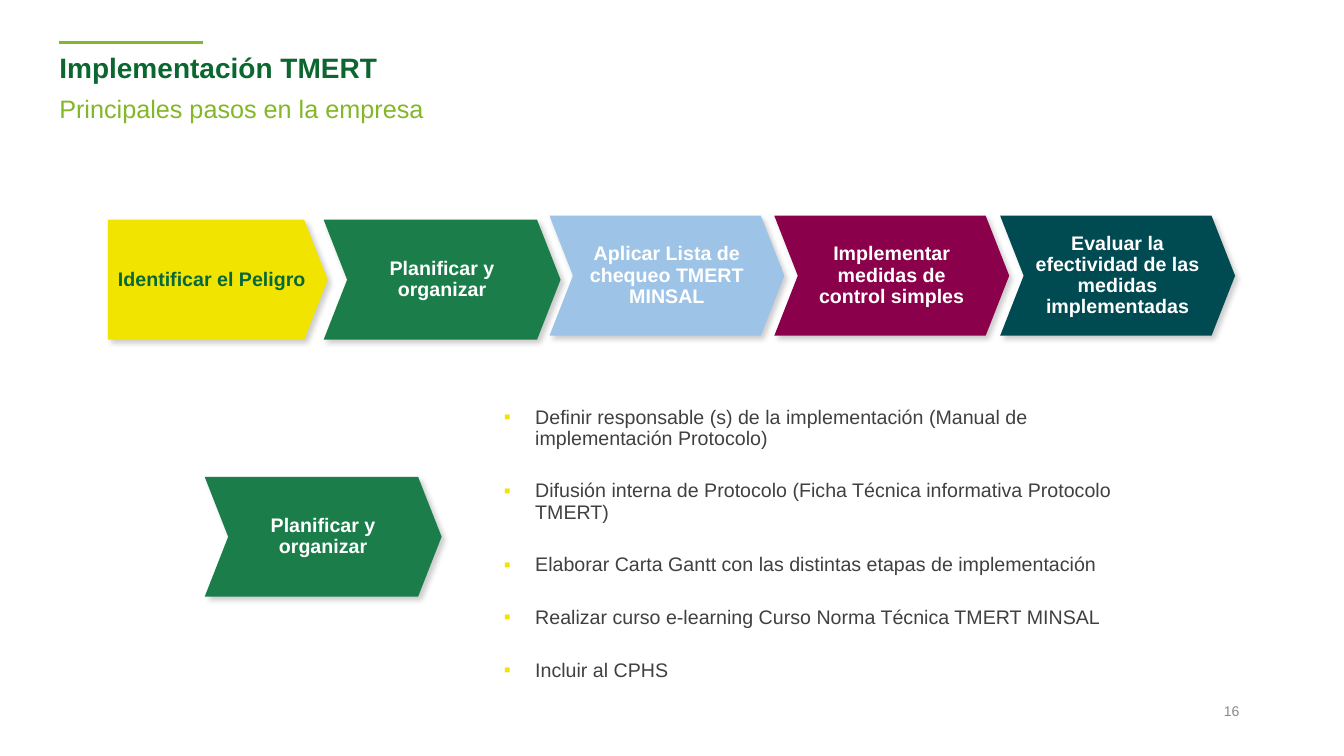
import lxml.etree
import pptx
import pptx.dml.color
import pptx.enum.shapes
import pptx.enum.text
import pptx.oxml.ns
import pptx.util

Inches = pptx.util.Inches
Pt = pptx.util.Pt
RGBColor = pptx.dml.color.RGBColor
Shape = pptx.enum.shapes.MSO_SHAPE
Align = pptx.enum.text.PP_ALIGN

DARK = RGBColor(0x0C, 0x66, 0x2F)
LIME = RGBColor(0x83, 0xB7, 0x27)
GREY = RGBColor(0x8A, 0x8A, 0x8A)
TEXT = RGBColor(0x40, 0x40, 0x40)
WHITE = RGBColor(0xFF, 0xFF, 0xFF)
FOREST = RGBColor(0x08, 0x68, 0x37)
YELLOW = RGBColor(0xF2, 0xE4, 0x01)
GREEN = RGBColor(0x1B, 0x7D, 0x4A)
BLUE = RGBColor(0x9D, 0xC4, 0xE7)
WINE = RGBColor(0x8A, 0x00, 0x4A)
TEAL = RGBColor(0x00, 0x4A, 0x51)

PLAN = "Planificar y organizar"
STEPS = [
    ("Identificar el Peligro", 1.07, 2.18, 2.18, YELLOW),
    (PLAN, 3.21, 2.18, 2.35, GREEN),
    ("Aplicar Lista de chequeo TMERT MINSAL", 5.45, 2.14, 2.33, BLUE),
    ("Implementar medidas de control simples", 7.68, 2.14, 2.33, WINE),
    ("Evaluar la efectividad de las medidas implementadas",
     9.92, 2.14, 2.33, TEAL),
]
TASKS = [
    "Definir responsable (s) de la implementación "
    "(Manual de implementación Protocolo)",
    "Difusión interna de Protocolo (Ficha Técnica informativa Protocolo TMERT)",
    "Elaborar Carta Gantt con las distintas etapas de implementación",
    "Realizar curso e-learning Curso Norma Técnica TMERT MINSAL",
    "Incluir al CPHS",
]


def add(parent, tag, **attrs):
    """Append a DrawingML element and return it."""
    name = pptx.oxml.ns.qn("a:" + tag)
    return lxml.etree.SubElement(parent, name, attrs)


class Deck:
    font = "Arial"
    high = 1.19

    def __init__(self):
        self.show = pptx.Presentation()
        self.show.slide_width = Inches(13.33)
        self.show.slide_height = Inches(7.5)
        self.slide = self.show.slides.add_slide(self.show.slide_layouts[6])

    def style(self, para, size, color, bold=False, align=Align.LEFT, space=0.9):
        para.alignment = align
        para.line_spacing = space
        for run in para.runs:
            run.font.name = self.font
            run.font.size = Pt(size)
            run.font.bold = bold
            run.font.color.rgb = color

    def rule(self, x, y, width, color):
        line = self.slide.shapes.add_connector(
            pptx.enum.shapes.MSO_CONNECTOR.STRAIGHT,
            Inches(x), Inches(y), Inches(x + width), Inches(y))
        line.line.color.rgb = color
        line.line.width = Pt(1.75)
        add(line.element.spPr, "effectLst")

    def box(self, x, y, width, height):
        frame = self.slide.shapes.add_textbox(
            Inches(x), Inches(y), Inches(width), Inches(height)).text_frame
        frame.word_wrap = True
        return frame

    def label(self, text, x, y, width, height, size, color, **look):
        frame = self.box(x, y, width, height)
        frame.text = text
        self.style(frame.paragraphs[0], size, color, **look)

    def shade(self, shape):
        """Give the shape a soft shadow to the lower right."""
        shape.shadow.inherit = False
        props = shape.element.spPr
        effects = props.find(pptx.oxml.ns.qn("a:effectLst"))
        outer = add(effects, "outerShdw", blurRad=str(Pt(4)), dist=str(Pt(3)),
                    dir="2700000", algn="tl", rotWithShape="0")
        add(add(outer, "srgbClr", val="000000"), "alpha", val="20000")

    def step(self, text, x, y, width, fill, kind=Shape.CHEVRON, color=WHITE):
        shape = self.slide.shapes.add_shape(
            kind, Inches(x), Inches(y), Inches(width), Inches(self.high))
        shape.adjustments[0] = 0.196
        shape.fill.solid()
        shape.fill.fore_color.rgb = fill
        shape.line.fill.background()
        self.shade(shape)
        frame = shape.text_frame
        frame.word_wrap = True
        frame.vertical_anchor = pptx.enum.text.MSO_ANCHOR.MIDDLE
        frame.margin_left = frame.margin_right = Inches(0.08)
        frame.margin_top = frame.margin_bottom = Inches(0.04)
        frame.text = text
        self.style(frame.paragraphs[0], 14, color, bold=True, align=Align.CENTER)

    def bullets(self, items, x, y, width, height):
        frame = self.box(x, y, width, height)
        frame.text = "\n".join(items)
        for i, para in enumerate(frame.paragraphs):
            props = para._p.get_or_add_pPr()
            props.set("marL", str(Inches(0.31)))
            props.set("indent", str(-Inches(0.31)))
            add(add(props, "buClr"), "srgbClr", val=str(YELLOW))
            add(props, "buFont", typeface=self.font)
            add(props, "buChar", char="▪")
            self.style(para, 14, TEXT)
            para.space_before = Pt(22.5 if i else 0)


def main():
    deck = Deck()
    deck.rule(0.59, 0.42, 1.42, LIME)
    deck.label("Implementación TMERT", 0.49, 0.49, 7.84, 0.45, 20, DARK,
               bold=True)
    deck.label("Principales pasos en la empresa", 0.49, 0.91, 7.84, 0.39, 18,
               LIME)
    deck.label("16", 10.37, 6.92, 2.02, 0.4, 10, GREY, align=Align.RIGHT,
               space=1.0)
    first, *rest = STEPS
    deck.step(*first, kind=Shape.PENTAGON, color=FOREST)
    for step in rest:
        deck.step(*step)
    deck.bullets(TASKS, 4.9, 3.99, 6.34, 3.13)
    deck.step(PLAN, 2.03, 4.73, 2.35, GREEN)
    deck.show.save("out.pptx")


if __name__ == "__main__":
    main()
